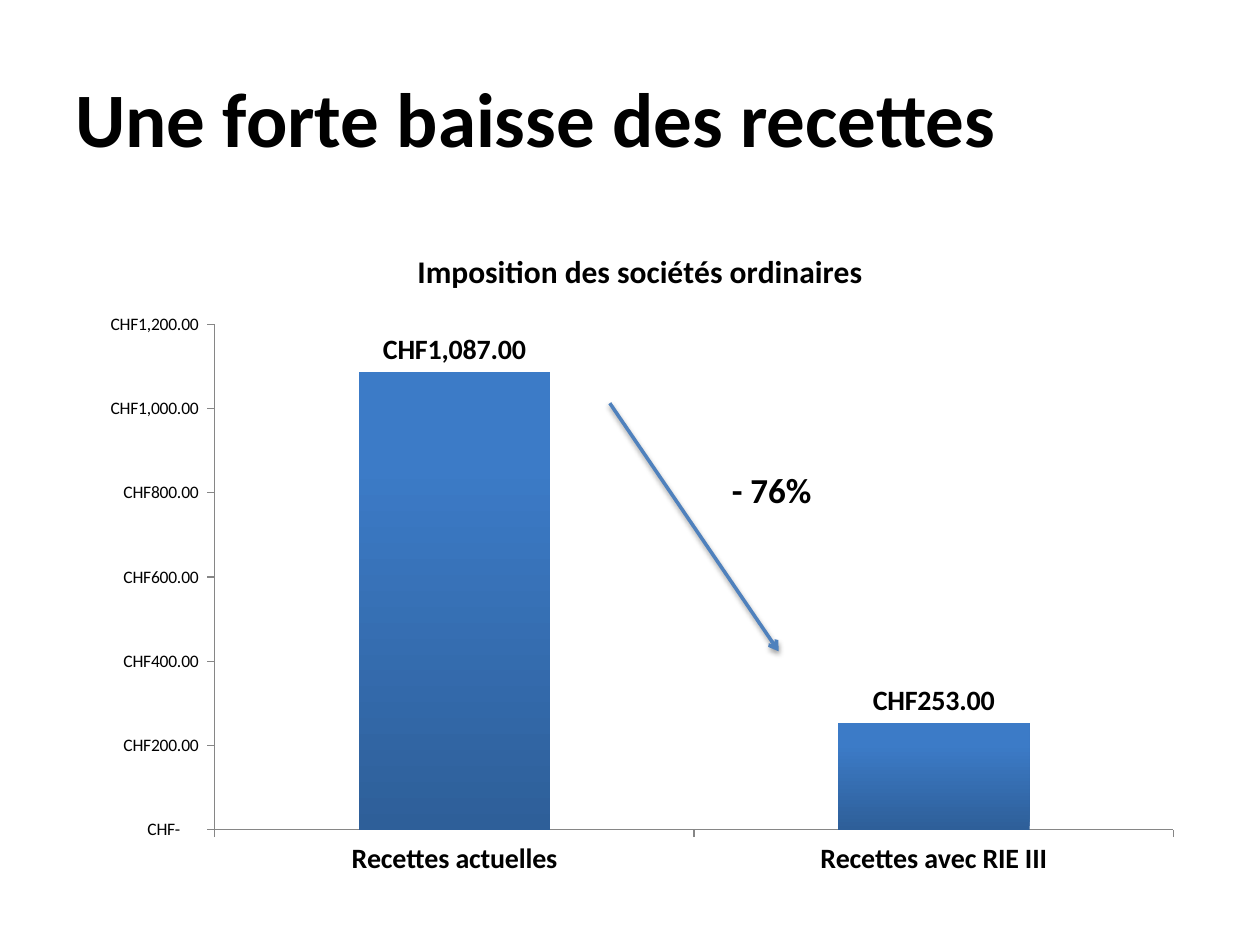
from lxml import etree
from pptx import Presentation
from pptx.chart.data import CategoryChartData
from pptx.dml.color import RGBColor
from pptx.enum.chart import XL_CHART_TYPE as ChartType, XL_LABEL_POSITION as LabelPosition, XL_TICK_MARK as TickMark
from pptx.enum.shapes import MSO_CONNECTOR as Connector
from pptx.enum.text import MSO_ANCHOR as Anchor, MSO_AUTO_SIZE as AutoSize
from pptx.oxml.ns import qn
from pptx.util import Inches, Pt

WIDTH, HEIGHT = 10, 7.5
FONT = "Calibri"
COLORS = {"text": "000000", "arrow": "4F81BD", "axis": "868686",
          "bar_bottom": "2E5F99", "bar_top": "3C7BC7"}
CURRENCY = '_-"CHF"* #,##0.00_-;\\-"CHF"* #,##0.00_-;_-"CHF"* "-"??_-;_-@_-'


def color(name):
    return RGBColor.from_string(COLORS[name])


def style_font(font, size, bold=False):
    font.name = FONT
    font.size = Pt(size)
    font.bold = bold
    font.color.rgb = color("text")


def add_text(slide, text, box, size, wrap=True):
    shape = slide.shapes.add_textbox(*map(Inches, box))
    frame = shape.text_frame
    frame.word_wrap = wrap
    if wrap:
        frame.vertical_anchor = Anchor.MIDDLE
    else:
        frame.auto_size = AutoSize.SHAPE_TO_FIT_TEXT
    paragraph = frame.paragraphs[0]
    paragraph.text = text
    style_font(paragraph.font, size, True)


def style_axis(axis, size, bold=False):
    axis.has_major_gridlines = False
    axis.major_tick_mark = TickMark.OUTSIDE
    axis.minor_tick_mark = TickMark.NONE
    axis.format.line.color.rgb = color("axis")
    axis.format.line.width = Pt(0.75)
    style_font(axis.tick_labels.font, size, bold)


def style_bars(plot):
    plot.gap_width = 150
    plot.vary_by_categories = False
    fill = plot.series[0].format.fill
    fill.gradient()
    fill.gradient_angle = 90
    for stop, name, position in zip(fill.gradient_stops, ("bar_bottom", "bar_top"), (0, 0.8)):
        stop.color.rgb = color(name)
        stop.position = position
    plot.has_data_labels = True
    labels = plot.data_labels
    labels.show_value = True
    labels.position = LabelPosition.OUTSIDE_END
    labels.number_format = CURRENCY
    labels.number_format_is_linked = False
    style_font(labels.font, 16, True)


def add_revenue_chart(slide, title, revenues, box):
    data = CategoryChartData(number_format=CURRENCY)
    data.categories = list(revenues)
    data.add_series("Series 1", list(revenues.values()))
    chart = slide.shapes.add_chart(ChartType.COLUMN_CLUSTERED, *map(Inches, box), data).chart
    style_font(chart.font, 10)
    chart.has_legend = False
    chart.has_title = True
    paragraph = chart.chart_title.text_frame.paragraphs[0]
    paragraph.text = title
    style_font(paragraph.font, 18, True)
    chart.chart_title.include_in_layout = False
    style_axis(chart.category_axis, 16, True)
    value_axis = chart.value_axis
    style_axis(value_axis, 10)
    value_axis.minimum_scale = 0
    value_axis.maximum_scale = 1200
    value_axis.major_unit = 200
    value_axis.tick_labels.number_format = CURRENCY
    value_axis.tick_labels.number_format_is_linked = False
    style_bars(chart.plots[0])


def add_arrow(slide, start, end):
    arrow = slide.shapes.add_connector(Connector.STRAIGHT, *map(Inches, start + end))
    arrow.line.color.rgb = color("arrow")
    arrow.line.width = Pt(2)
    etree.SubElement(arrow.line._get_or_add_ln(), qn("a:tailEnd"), type="arrow")
    effects = etree.SubElement(arrow._element.spPr, qn("a:effectLst"))
    shadow = etree.SubElement(effects, qn("a:outerShdw"), blurRad="40000", dist="20000",
                              dir="5400000", rotWithShape="0")
    shade = etree.SubElement(shadow, qn("a:srgbClr"), val=COLORS["text"])
    etree.SubElement(shade, qn("a:alpha"), val="38000")


def main():
    presentation = Presentation()
    presentation.slide_width = Inches(WIDTH)
    presentation.slide_height = Inches(HEIGHT)
    slide = presentation.slides.add_slide(presentation.slide_layouts[6])
    margin = 0.05 * WIDTH
    add_text(slide, "Une forte baisse des recettes",
             (margin, 0.04 * HEIGHT, WIDTH - 2 * margin, HEIGHT / 6), 44)
    add_revenue_chart(slide, "Imposition des sociétés ordinaires",
                      {"Recettes actuelles": 1087, "Recettes avec RIE III": 253},
                      (0.67, 1.78, 8.82, 5.28))
    add_arrow(slide, (4.84, 3.2), (6.18, 5.17))
    add_text(slide, "- 76%", (5.71, 3.67, 0.87, 0.44), 20, wrap=False)
    presentation.save("out.pptx")


if __name__ == "__main__":
    main()
